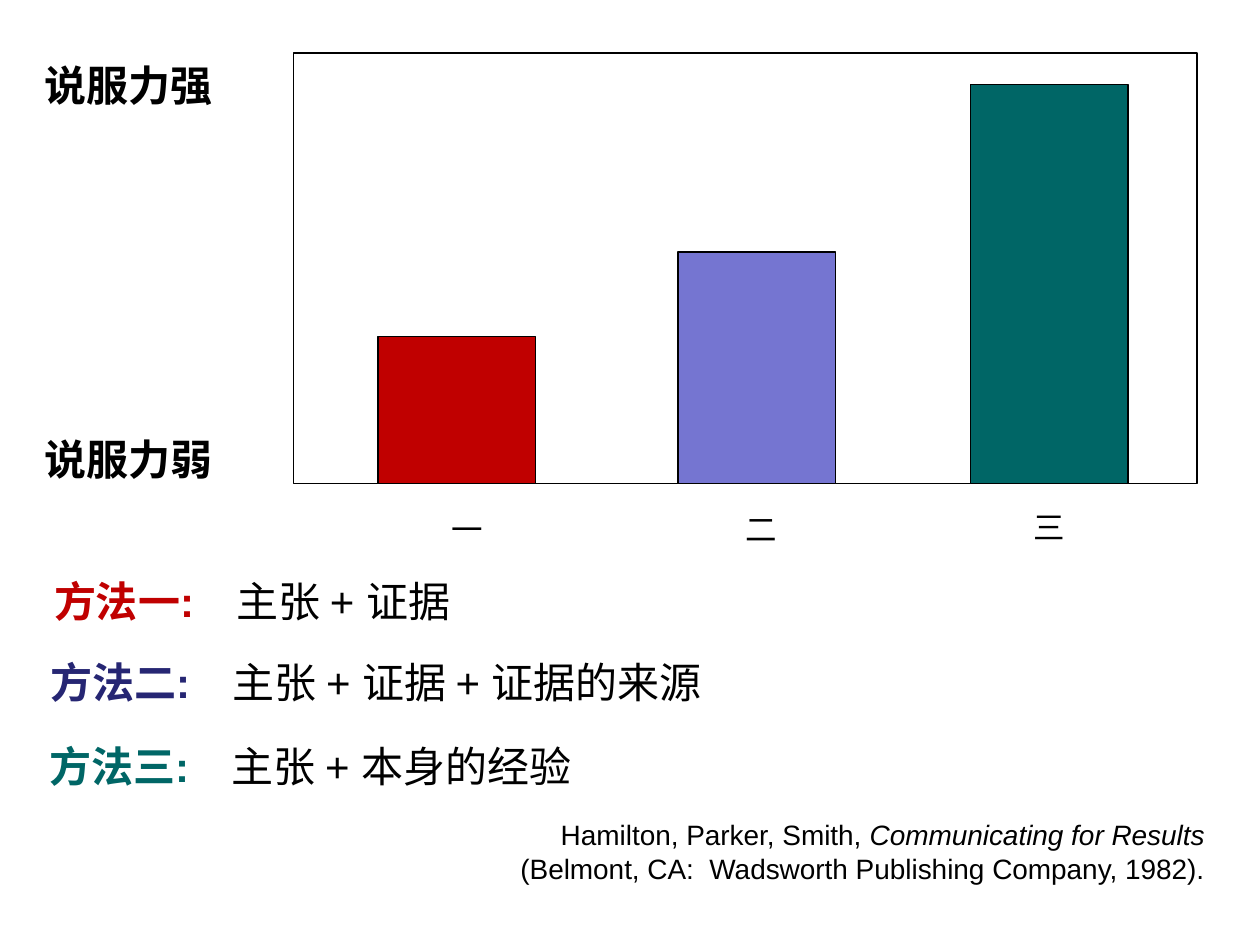
from dataclasses import dataclass

from lxml.etree import SubElement
from pptx import Presentation
from pptx.dml.color import RGBColor
from pptx.enum.shapes import MSO_SHAPE as Shape
from pptx.enum.text import MSO_AUTO_SIZE as AutoSize, PP_ALIGN as Align
from pptx.oxml.ns import qn
from pptx.util import Cm, Pt

COLORS = {
    "black": "000000",
    "white": "FFFFFF",
    "red": "C00000",
    "lilac": "7575D1",
    "navy": "262673",
    "teal": "006666",
}
BASELINE = 9.75
BAR_WIDTH = 3.18
TAB_STOP = 3.68


@dataclass
class Run:
    text: str
    size: int
    color: str = "black"
    bold: bool = False
    italic: bool = False


@dataclass
class Bar:
    left: float
    height: float
    fill: str
    label: str
    label_left: float
    label_top: float


@dataclass
class Method:
    left: float
    top: float
    name: str
    formula: str
    color: str


BARS = [
    Bar(7.62, 2.97, "red", "一", 8.69, 10.16),
    Bar(13.67, 4.67, "lilac", "二", 14.61, 10.16),
    Bar(19.56, 8.05, "teal", "三", 20.42, 10.11),
]
METHODS = [
    Method(0.84, 11.48, "方法一:", "主张 + 证据", "red"),
    Method(0.76, 13.11, "方法二:", "主张 + 证据 + 证据的来源", "navy"),
    Method(0.74, 14.81, "方法三:", "主张 + 本身的经验", "teal"),
]


def rgb(name: str) -> RGBColor:
    return RGBColor.from_string(COLORS[name])


def add_rectangle(slide, left: float, top: float, width: float, height: float,
                  fill: str, line_width: float) -> None:
    shape = slide.shapes.add_shape(
        Shape.RECTANGLE, Cm(left), Cm(top), Cm(width), Cm(height))
    shape.shadow.inherit = False
    shape.fill.solid()
    shape.fill.fore_color.rgb = rgb(fill)
    shape.line.color.rgb = rgb("black")
    shape.line.width = Pt(line_width)


def add_text(slide, left: float, top: float, width: float, height: float,
             lines: list[list[Run]], align=Align.LEFT, tab: float = 0) -> None:
    box = slide.shapes.add_textbox(Cm(left), Cm(top), Cm(width), Cm(height))
    frame = box.text_frame
    frame.word_wrap = True
    frame.auto_size = AutoSize.SHAPE_TO_FIT_TEXT
    for index, line in enumerate(lines):
        paragraph = frame.add_paragraph() if index else frame.paragraphs[0]
        paragraph.alignment = align
        if tab:
            properties = paragraph._p.get_or_add_pPr()
            tab_list = SubElement(properties, qn("a:tabLst"))
            SubElement(tab_list, qn("a:tab"), pos=str(Cm(tab)), algn="l")
        for item in line:
            run = paragraph.add_run()
            run.text = item.text
            formats = {"name": "Arial", "size": Pt(item.size),
                       "bold": item.bold, "italic": item.italic}
            for attribute, value in formats.items():
                setattr(run.font, attribute, value)
            run.font.color.rgb = rgb(item.color)


def main() -> None:
    presentation = Presentation()
    presentation.slide_width, presentation.slide_height = Cm(25.4), Cm(19.05)
    slide = presentation.slides.add_slide(presentation.slide_layouts[6])

    # Chart frame and the ends of its scale
    add_rectangle(slide, 5.92, 1.07, 18.21, BASELINE - 1.07, "white", 1)
    for text, top in (("说服力强", 1.07), ("说服力弱", 8.61)):
        add_text(slide, 0.64, top, 5.28, 1.27, [[Run(text, 24, bold=True)]])

    # Bars standing on the baseline, with their numbers
    for bar in BARS:
        add_rectangle(slide, bar.left, BASELINE - bar.height, BAR_WIDTH,
                      bar.height, bar.fill, 0.75)
        add_text(slide, bar.label_left, bar.label_top, 1.47, 1.02,
                 [[Run(bar.label, 18)]], Align.CENTER)

    # Explanation of the methods
    for method in METHODS:
        add_text(slide, method.left, method.top, 23.3, 1.27,
                 [[Run(method.name + "\t", 24, method.color, bold=True),
                   Run(method.formula, 24)]], tab=TAB_STOP)

    # Citation
    add_text(slide, 0.84, 16.36, 23.7, 1.63, [
        [Run("Hamilton, Parker, Smith, ", 16),
         Run("Communicating for Results", 16, italic=True)],
        [Run("(Belmont, CA:  Wadsworth Publishing Company, 1982).", 16)],
    ], Align.RIGHT)

    presentation.save("out.pptx")


if __name__ == "__main__":
    main()
